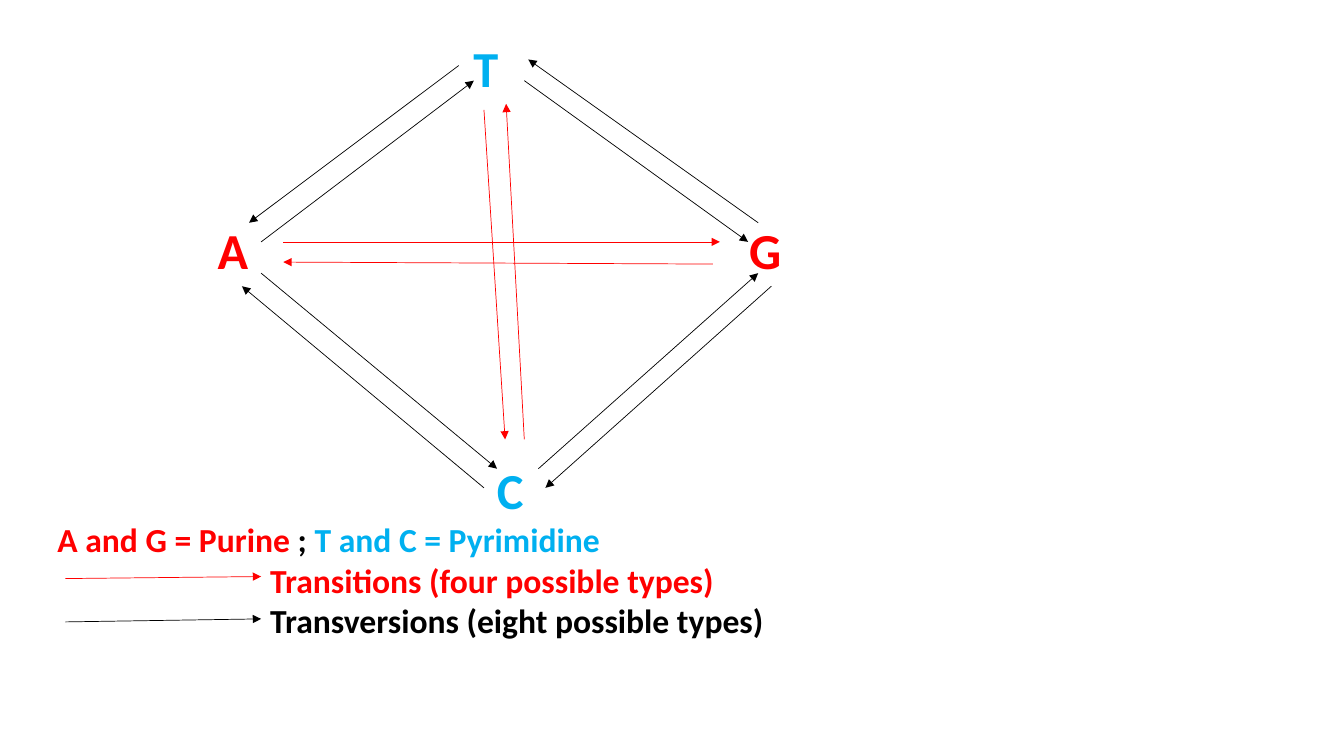
from lxml import etree
from pptx import Presentation
from pptx.dml.color import RGBColor
from pptx.enum.shapes import MSO_CONNECTOR
from pptx.enum.text import MSO_ANCHOR, PP_ALIGN
from pptx.oxml.ns import qn
from pptx.util import Inches, Pt

COLORS = {"purine": "FF0000", "pyrimidine": "00B0F0",
          "transition": "FF0000", "transversion": "000000"}
FONT = "Calibri"

# Letter centres and arrow ends, in inches from the diagram's corner
BASES = [("T", "pyrimidine", 2.82, 0.27), ("A", "purine", 0.31, 2.07),
         ("G", "purine", 5.59, 2.07), ("C", "pyrimidine", 3.06, 4.45)]
SUBSTITUTIONS = {
    "transversion": [
        (2.55, 0.25, 0.47, 1.81), (0.59, 2.0, 2.7, 0.4),    # T and A
        (3.2, 0.4, 5.42, 2.0), (5.52, 1.81, 3.24, 0.19),    # T and G
        (2.8, 4.44, 0.4, 2.44), (0.59, 2.31, 2.93, 4.25),   # C and A
        (3.34, 4.25, 5.52, 2.31), (5.65, 2.44, 3.41, 4.44), # C and G
    ],
    "transition": [
        (0.81, 2.0, 5.14, 2.0), (5.07, 2.22, 0.81, 2.2),    # A and G
        (2.8, 0.69, 3.01, 3.96), (3.2, 3.96, 3.02, 0.63),   # T and C
    ],
}


def add_arrow(slide, x1, y1, x2, y2, kind):
    line = slide.shapes.add_connector(
        MSO_CONNECTOR.STRAIGHT, Inches(x1), Inches(y1), Inches(x2), Inches(y2))
    line.line.color.rgb = RGBColor.from_string(COLORS[kind])
    line.line.width = Pt(0.5)
    etree.SubElement(line.line._get_or_add_ln(), qn("a:tailEnd"), type="triangle")
    etree.SubElement(line._element.spPr, qn("a:effectLst"))


def add_text_frame(slide, x, y, w, h):
    tf = slide.shapes.add_textbox(
        Inches(x), Inches(y), Inches(w), Inches(h)).text_frame
    tf.word_wrap = True
    tf.margin_left = tf.margin_right = tf.margin_top = tf.margin_bottom = 0
    return tf


def add_run(p, text, kind, size):
    r = p.add_run()
    r.text = text
    r.font.name, r.font.size, r.font.bold = FONT, Pt(size), True
    r.font.color.rgb = RGBColor.from_string(COLORS[kind])


def add_diagram(slide, left, top):
    """Place the four bases and the arrows between them."""
    w, h = 0.6, 0.6
    for letter, kind, cx, cy in BASES:
        tf = add_text_frame(slide, left + cx - w / 2, top + cy - h / 2, w, h)
        tf.vertical_anchor = MSO_ANCHOR.MIDDLE
        p = tf.paragraphs[0]
        p.alignment = PP_ALIGN.CENTER
        add_run(p, letter, kind, 36)
    for kind, arrows in SUBSTITUTIONS.items():
        for x1, y1, x2, y2 in arrows:
            add_arrow(slide, left + x1, top + y1, left + x2, top + y2, kind)


def add_legend(slide, left, top, width, height):
    tf = add_text_frame(slide, left, top, width, height)
    p = tf.paragraphs[0]
    add_run(p, "A and G = Purine ", "purine", 24)
    add_run(p, ";", "transversion", 24)
    add_run(p, " T and C = Pyrimidine", "pyrimidine", 24)
    keys = [("Transitions (four possible types)", "transition", 0.59, 0.57),
            ("Transversions (eight possible types)", "transversion", 1.02, 0.99)]
    for text, kind, start, end in keys:
        p = tf.add_paragraph()
        p._p.get_or_add_pPr().set("marL", str(Inches(2.11)))
        add_run(p, text, kind, 24)
        add_arrow(slide, left + 0.08, top + start, left + 2.02, top + end, kind)


def main():
    prs = Presentation()
    prs.slide_width, prs.slide_height = Inches(13.33), Inches(7.5)
    slide = prs.slides.add_slide(prs.slide_layouts[6])
    add_diagram(slide, 2, 0.4)
    add_legend(slide, 0.57, 5.15, 8, 1.25)
    prs.save("out.pptx")


if __name__ == "__main__":
    main()
